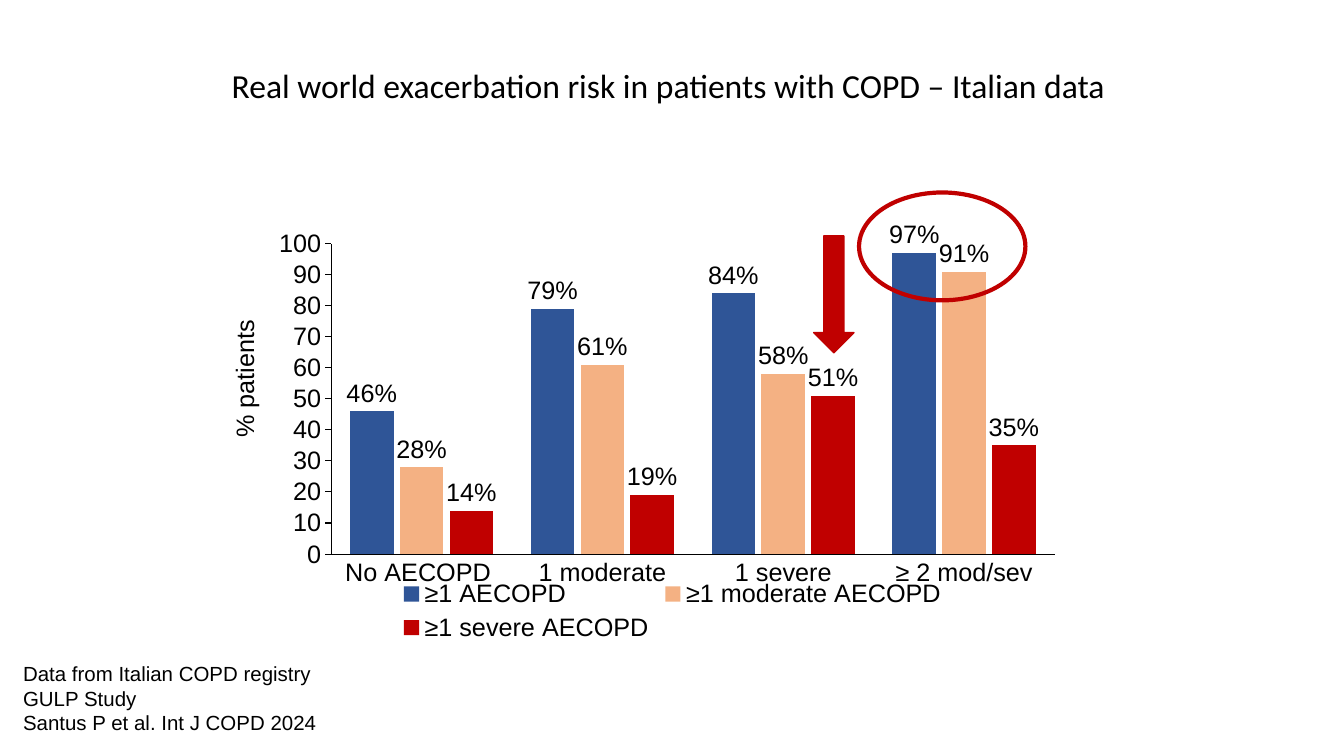
from lxml.etree import fromstring
from pptx import Presentation
from pptx.chart.data import CategoryChartData
from pptx.dml.color import RGBColor
from pptx.enum.chart import (XL_CHART_TYPE, XL_LABEL_POSITION,
                             XL_LEGEND_POSITION, XL_TICK_MARK)
from pptx.enum.shapes import MSO_SHAPE
from pptx.enum.text import MSO_AUTO_SIZE
from pptx.util import Pt

PX = 9144  # 100 px to the inch
BLACK, BLUE, PEACH, RED = "000000", "2F5597", "F4B183", "C00000"
GROUPS = ["No AECOPD ", "1 moderate", "1 severe", "≥ 2 mod/sev"]
SERIES = [
    ("≥1 AECOPD", BLUE, [46, 79, 84, 97]),
    ("≥1 moderate AECOPD", PEACH, [28, 61, 58, 91]),
    ("≥1 severe AECOPD", RED, [14, 19, 51, 35]),
]
SOURCE = ["Data from Italian COPD registry", "GULP Study",
          "Santus P et al. Int J COPD 2024"]
CHART_NS = "http://schemas.openxmlformats.org/drawingml/2006/chart"


def color(code):
    return RGBColor.from_string(code)


def place(*box):
    return [n * PX for n in box]


def style(font, name, size):
    font.name, font.size = name, Pt(size)
    font.color.rgb = color(BLACK)


def add_text(slide, box, lines, name, size, turn=0):
    shape = slide.shapes.add_textbox(*place(*box))
    shape.rotation = turn
    frame = shape.text_frame
    frame.word_wrap = False
    frame.auto_size = MSO_AUTO_SIZE.SHAPE_TO_FIT_TEXT
    frame.text = "\n".join(lines)
    for para in frame.paragraphs:
        for run in para.runs:
            style(run.font, name, size)


def add_mark(slide, kind, box, width, fill=None):
    shape = slide.shapes.add_shape(kind, *place(*box))
    shape.shadow.inherit = False
    if fill:
        shape.fill.solid()
        shape.fill.fore_color.rgb = color(fill)
    else:
        shape.fill.background()
    shape.line.color.rgb = color(RED)
    shape.line.width = Pt(width)


def layout(x, y, w, h, inner=False):
    """Fixed place of a chart part, in shares of the chart."""
    target = '<c:layoutTarget val="inner"/>' if inner else ""
    modes = '<c:xMode val="edge"/><c:yMode val="edge"/>'
    sizes = "".join(f'<c:{tag} val="{n}"/>'
                    for tag, n in zip("xywh", (x, y, w, h)))
    return fromstring(f'<c:layout xmlns:c="{CHART_NS}"><c:manualLayout>'
                      f'{target}{modes}{sizes}</c:manualLayout></c:layout>')


def set_layout(part, index, new):
    for old in part.findall(f"{{{CHART_NS}}}layout"):
        part.remove(old)
    part.insert(index, new)


def style_axis(axis, tick):
    axis.has_major_gridlines = False
    axis.major_tick_mark = tick
    axis.minor_tick_mark = XL_TICK_MARK.NONE
    axis.format.line.color.rgb = color(BLACK)
    axis.format.line.width = Pt(0.75)
    style(axis.tick_labels.font, "Arial", 18)


def style_bars(plot):
    plot.gap_width, plot.overlap = 86, -14
    plot.vary_by_categories = False
    for bars, (_, fill, _) in zip(plot.series, SERIES):
        bars.format.fill.solid()
        bars.format.fill.fore_color.rgb = color(fill)
        labels = bars.data_labels
        labels.show_value = True
        labels.number_format = '0"%"'
        labels.number_format_is_linked = False
        labels.position = XL_LABEL_POSITION.OUTSIDE_END
        style(labels.font, "Arial", 18)


def add_bars(slide, box):
    data = CategoryChartData()
    data.categories = GROUPS
    for name, _, values in SERIES:
        data.add_series(name, values)
    chart = slide.shapes.add_chart(
        XL_CHART_TYPE.COLUMN_CLUSTERED, *place(*box), data).chart
    chart.has_title = False
    style(chart.font, "Arial", 18)
    style_bars(chart.plots[0])

    # Axes
    style_axis(chart.category_axis, XL_TICK_MARK.NONE)
    scale = chart.value_axis
    style_axis(scale, XL_TICK_MARK.OUTSIDE)
    scale.minimum_scale, scale.maximum_scale = 0, 100
    scale.major_unit = 10

    # Legend
    chart.has_legend = True
    legend = chart.legend
    legend.position = XL_LEGEND_POSITION.BOTTOM
    legend.include_in_layout = False
    style(legend.font, "Arial", 18)

    # Fixed places of plot and legend
    area = chart.plots[0]._element.getparent()
    set_layout(area, 0, layout(0.081, 0.111, 0.888, 0.684, inner=True))
    set_layout(legend._element, 1, layout(0.16, 0.84, 0.68, 0.16))


def main():
    deck = Presentation()
    deck.slide_width, deck.slide_height = place(1333, 750)
    slide = deck.slides.add_slide(deck.slide_layouts[6])

    # Chart and source
    add_bars(slide, (263, 192, 808, 450))
    add_text(slide, (13, 651, 315, 84), SOURCE, "Arial", 14.6)

    # Highlights
    add_mark(slide, MSO_SHAPE.DOWN_ARROW, (807, 234, 40, 116), 1, RED)
    add_mark(slide, MSO_SHAPE.OVAL, (852, 191, 165, 107), 3)

    # Title and axis name
    add_text(slide, (220, 59, 894, 50),
             ["Real world exacerbation risk in patients with COPD – Italian data"],
             "Calibri", 24)
    add_text(slide, (173, 355, 138, 40), ["% patients"], "Arial", 18, 270)

    deck.save("out.pptx")


if __name__ == "__main__":
    main()
